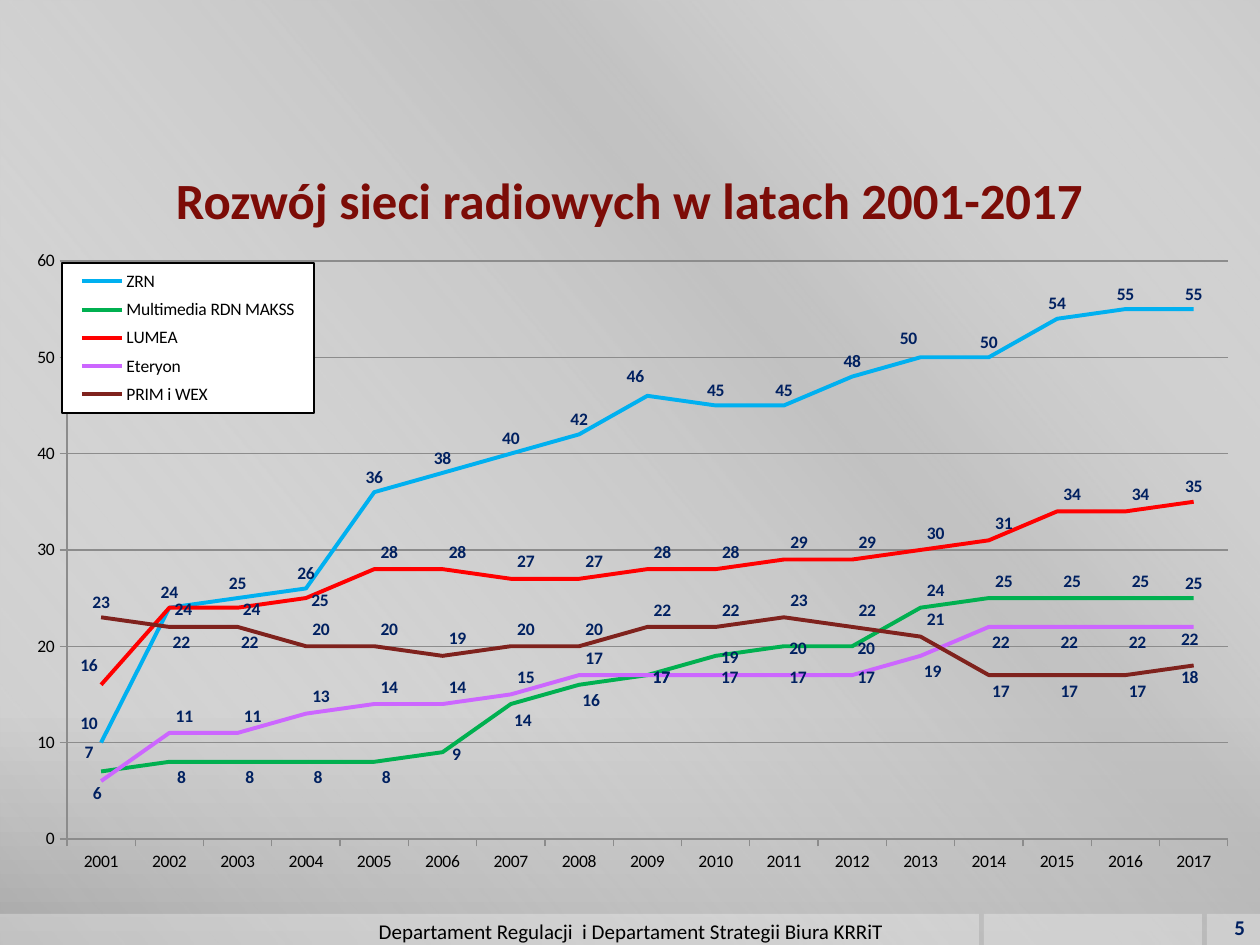
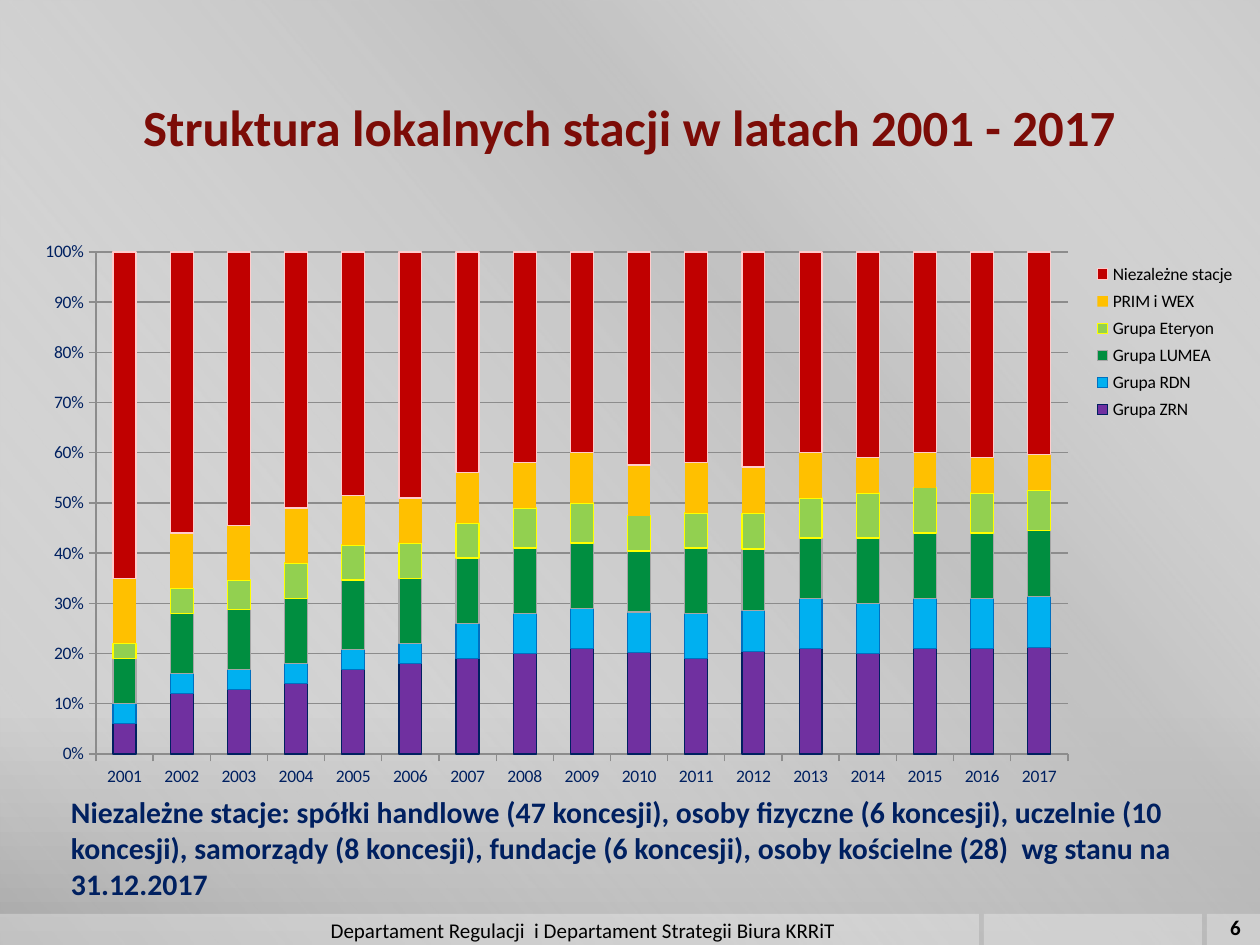
from dataclasses import dataclass

from lxml import etree
from pptx import Presentation
from pptx.chart.data import CategoryChartData
from pptx.dml.color import RGBColor
from pptx.enum.chart import XL_CHART_TYPE, XL_LABEL_POSITION, XL_LEGEND_POSITION, XL_TICK_MARK
from pptx.enum.shapes import MSO_SHAPE
from pptx.enum.text import MSO_ANCHOR, PP_ALIGN
from pptx.oxml import parse_xml
from pptx.oxml.ns import nsdecls, qn
from pptx.util import Emu, Pt

LINE = XL_CHART_TYPE.LINE
STACKED = XL_CHART_TYPE.COLUMN_STACKED_100
LABEL_ABOVE = XL_LABEL_POSITION.ABOVE
RIGHT_SIDE = XL_LEGEND_POSITION.RIGHT
OUTSIDE = XL_TICK_MARK.OUTSIDE
RECTANGLE = MSO_SHAPE.RECTANGLE
TOP, MIDDLE = MSO_ANCHOR.TOP, MSO_ANCHOR.MIDDLE
LEFT, CENTER, RIGHT = PP_ALIGN.LEFT, PP_ALIGN.CENTER, PP_ALIGN.RIGHT


@dataclass(frozen=True)
class Theme:
    font: str = "Calibri"
    title: str = "7C0C07"
    navy: str = "002060"
    black: str = "000000"
    white: str = "FFFFFF"
    grid: str = "8C8C8C"
    title_size: int = 29
    note_size: int = 17
    footer_size: int = 12
    chart_size: int = 10
    backdrop: tuple = ((0, "CBCBCB", 100), (76, "C8C8C8", 100), (100, "A7A7A7", 100))
    sheen: tuple = ((0, "FFFFFF", 0), (34, "BFBFBF", 61), (38, "BFBFBF", 76), (100, "FFFFFF", 0))
    band_opacity: int = 30
    curve_width: float = 2.25
    thin_width: float = 0.75


THEME = Theme()
PAGE = (1260, 945)
PX = 914400 / 126
BAND_TOP = 914
BAND_SPANS = [(1207, 1260), (984, 1202), (0, 979)]
FOOTER = "Departament Regulacji  i Departament Strategii Biura KRRiT"
YEARS = [str(year) for year in range(2001, 2018)]

ABOVE, UPPER_LEFT, UPPER_RIGHT, LOWER_RIGHT, BESIDE, BELOW = range(6)
LABEL_SHIFTS = {
    UPPER_LEFT: (-12, -4),
    UPPER_RIGHT: (15, -2),
    LOWER_RIGHT: (12, 31),
    BESIDE: (14, 17),
    BELOW: (-4, 27),
}

NETWORKS = {
    "title": "Rozwój sieci radiowych w latach 2001-2017",
    "title_box": (63, 136, 1134, 126),
    "footer_box": (174, 915, 914, 32),
    "number": ("5", (1205, 911, 53, 32), THEME.navy, RIGHT),
    "frame": (21, 242, 1218, 630),
    "plot": (67, 261, 1161, 578),
    "legend": (62, 263, 252, 150),
    "series": [
        ("ZRN", "00B0F0", [10, 24, 25, 26, 36, 38, 40, 42, 46, 45, 45, 48, 50, 50, 54, 55, 55],
         [UPPER_LEFT] + [ABOVE] * 7 + [UPPER_LEFT] + [ABOVE] * 3 + [UPPER_LEFT] + [ABOVE] * 4),
        ("Multimedia RDN MAKSS", "00B050", [7, 8, 8, 8, 8, 9, 14, 16, 17, 19, 20, 20, 24, 25, 25, 25, 25],
         [UPPER_LEFT] + [LOWER_RIGHT] * 4 + [BESIDE] + [LOWER_RIGHT] * 2 + [BESIDE] * 4
         + [UPPER_RIGHT] * 4 + [ABOVE]),
        ("LUMEA", "FF0000", [16, 24, 24, 25, 28, 28, 27, 27, 28, 28, 29, 29, 30, 31, 34, 34, 35],
         [UPPER_LEFT] + [BESIDE] * 3 + [UPPER_RIGHT] * 12 + [ABOVE]),
        ("Eteryon", "CC66FF", [6, 11, 11, 13, 14, 14, 15, 17, 17, 17, 17, 17, 19, 22, 22, 22, 22],
         [BELOW] + [UPPER_RIGHT] * 7 + [BESIDE] * 4 + [LOWER_RIGHT] * 4 + [BELOW]),
        ("PRIM i WEX", "7F221D", [23, 22, 22, 20, 20, 19, 20, 20, 22, 22, 23, 22, 21, 17, 17, 17, 18],
         [ABOVE] + [LOWER_RIGHT] * 2 + [UPPER_RIGHT] * 10 + [LOWER_RIGHT] * 3 + [BELOW]),
    ],
}

STATIONS = {
    "title": "Struktura lokalnych stacji w latach 2001 - 2017",
    "title_box": (63, 63, 1134, 126),
    "footer_box": (126, 914, 914, 32),
    "number": ("6", (1217, 908, 37, 38), THEME.black, CENTER),
    "frame": (21, 231, 1228, 567),
    "plot": (96, 252, 972, 502),
    "legend": (1085, 257, 160, 170),
    "note": "Niezależne stacje: spółki handlowe (47 koncesji), osoby fizyczne (6 koncesji), "
            "uczelnie (10 koncesji), samorządy (8 koncesji), fundacje (6 koncesji), "
            "osoby kościelne (28)  wg stanu na 31.12.2017",
    "note_box": (58, 788, 1155, 94),
    "series": [
        ("Grupa ZRN", "7030A0", [6, 12, 13, 14, 17, 18, 19, 20, 21, 20, 19, 20, 21, 20, 21, 21, 21], "002060"),
        ("Grupa RDN", "00B0F0", [4] * 6 + [7, 8, 8, 8, 9, 8] + [10] * 5, "0070C0"),
        ("Grupa LUMEA", "008E40", [9, 12, 12, 13, 14, 13, 13, 13, 13, 12, 13, 12, 12, 13, 13, 13, 13], "A6A6A6"),
        ("Grupa Eteryon", "92D050", [3, 5, 6, 7, 7, 7, 7, 8, 8, 7, 7, 7, 8, 9, 9, 8, 8], "FFFF00"),
        ("PRIM i WEX", "FFC000", [13, 11, 11, 11, 10, 9, 10, 9, 10, 10, 10, 9, 9, 7, 7, 7, 7], None),
        ("Niezależne stacje", "C00000",
         [65, 56, 55, 51, 49, 49, 44, 42, 40, 42, 42, 42, 40, 41, 40, 41, 40], "FFCCCC"),
    ],
}


def scaled(box):
    return [Emu(round(length * PX)) for length in box]


def style_font(font, size, color, bold=False):
    font.name, font.size, font.bold = THEME.font, Pt(size), bold
    font.color.rgb = RGBColor.from_string(color)


def style_line(line, color, width):
    line.color.rgb = RGBColor.from_string(color)
    line.width = Pt(width)


def add_text(slide, box, text, size, color, bold=False, align=LEFT, anchor=TOP, side_margin=13, wrap=True):
    frame = slide.shapes.add_textbox(*scaled(box)).text_frame
    frame.word_wrap = wrap
    frame.vertical_anchor = anchor
    frame.margin_left, frame.margin_right = scaled((side_margin, side_margin))
    paragraph = frame.paragraphs[0]
    paragraph.alignment = align
    run = paragraph.add_run()
    run.text = text
    style_font(run.font, size, color, bold)


def add_opacity(color_element, opacity):
    etree.SubElement(color_element, qn("a:alpha"), val=str(opacity * 1000))


def set_gradient(solid_fill, stops, angle):
    gradient = parse_xml(f'<a:gradFill {nsdecls("a")} rotWithShape="1"><a:gsLst/>'
                         f'<a:lin ang="{angle * 60000}" scaled="0"/></a:gradFill>')
    for position, color, opacity in stops:
        stop = etree.SubElement(gradient[0], qn("a:gs"), pos=str(position * 1000))
        add_opacity(etree.SubElement(stop, qn("a:srgbClr"), val=color), opacity)
    solid_fill.getparent().replace(solid_fill, gradient)


def add_panel(slide, box):
    shape = slide.shapes.add_shape(RECTANGLE, *scaled(box))
    shape.shadow.inherit = False
    shape.line.fill.background()
    shape.fill.solid()
    shape.fill.fore_color.rgb = RGBColor.from_string(THEME.white)
    return shape._element.spPr.find(qn("a:solidFill"))


def add_base_slide(presentation, content):
    slide = presentation.slides.add_slide(presentation.slide_layouts[6])
    slide.background.fill.solid()
    set_gradient(next(slide._element.iter(qn("a:solidFill"))), THEME.backdrop, 90)
    set_gradient(add_panel(slide, (0, 0, *PAGE)), THEME.sheen, 140)
    for start, end in BAND_SPANS:
        band_fill = add_panel(slide, (start, BAND_TOP, end - start, PAGE[1] - BAND_TOP))
        add_opacity(band_fill[0], THEME.band_opacity)
    add_text(slide, content["title_box"], content["title"], THEME.title_size, THEME.title,
             bold=True, align=CENTER, anchor=MIDDLE, side_margin=0)
    add_text(slide, content["footer_box"], FOOTER, THEME.footer_size, THEME.black,
             align=CENTER, anchor=MIDDLE)
    number, box, color, align = content["number"]
    add_text(slide, box, number, THEME.footer_size, color, bold=True, align=align,
             anchor=MIDDLE, wrap=False)
    return slide


def manual_layout(**values):
    layout = parse_xml(f'<c:layout {nsdecls("c")}><c:manualLayout/></c:layout>')
    for name, value in values.items():
        etree.SubElement(layout[0], qn(f"c:{name}"), val=str(value))
    return layout


def place_part(part, index, box, frame, **options):
    for old_layout in part.findall(qn("c:layout")):
        part.remove(old_layout)
    left, top, width, height = box
    part.insert(index, manual_layout(
        **options, xMode="edge", yMode="edge",
        x=round((left - frame[0]) / frame[2], 4), y=round((top - frame[1]) / frame[3], 4),
        w=round(width / frame[2], 4), h=round(height / frame[3], 4)))


def add_styled_chart(slide, content, chart_type, axis_color, overlay):
    data = CategoryChartData()
    data.categories = YEARS
    for name, _, values, _ in content["series"]:
        data.add_series(name, values)
    frame = content["frame"]
    chart = slide.shapes.add_chart(chart_type, *scaled(frame), data).chart
    chart.has_title = False
    style_font(chart.font, THEME.chart_size, THEME.black)
    chart.plots[0].vary_by_categories = False
    for axis in (chart.category_axis, chart.value_axis):
        axis.major_tick_mark = OUTSIDE
        style_font(axis.tick_labels.font, THEME.chart_size, axis_color)
        style_line(axis.format.line, THEME.grid, THEME.thin_width)
    chart.value_axis.has_major_gridlines = True
    style_line(chart.value_axis.major_gridlines.format.line, THEME.grid, THEME.thin_width)
    chart.has_legend = True
    legend = chart.legend
    legend.position = RIGHT_SIDE
    legend.include_in_layout = overlay
    style_font(legend.font, THEME.chart_size, THEME.black)
    place_part(legend._element, 1, content["legend"], frame)
    plot_area = next(chart._chartSpace.iter(qn("c:plotArea")))
    place_part(plot_area, 0, content["plot"], frame, layoutTarget="inner")
    return chart


def style_label(label):
    style_font(label.font, THEME.chart_size, THEME.navy, bold=True)
    label.position = LABEL_ABOVE


def place_labels(series, places, frame):
    series.data_labels.show_value = True
    style_label(series.data_labels)
    shifted = [(index, LABEL_SHIFTS[place]) for index, place in enumerate(places) if place != ABOVE]
    for index, _ in shifted:
        style_label(series.points[index].data_label)
    for element, (_, (right, down)) in zip(series._element.iter(qn("c:dLbl")), shifted):
        element.insert(1, manual_layout(x=round(right / frame[2], 4), y=round(down / frame[3], 4)))


def build_networks(presentation):
    slide = add_base_slide(presentation, NETWORKS)
    chart = add_styled_chart(slide, NETWORKS, LINE, THEME.black, True)
    chart.value_axis.minimum_scale = 0
    chart.value_axis.maximum_scale = 60
    chart.value_axis.major_unit = 10
    overlay = chart.legend._element.find(qn("c:overlay"))
    overlay.addnext(parse_xml(
        f'<c:spPr {nsdecls("c", "a")}><a:solidFill><a:srgbClr val="{THEME.white}"/></a:solidFill>'
        f'<a:ln w="{Pt(THEME.thin_width)}"><a:solidFill><a:srgbClr val="{THEME.black}"/>'
        f'</a:solidFill></a:ln></c:spPr>'))
    for series, (_, color, _, places) in zip(chart.plots[0].series, NETWORKS["series"]):
        series.smooth = False
        style_line(series.format.line, color, THEME.curve_width)
        place_labels(series, places, NETWORKS["frame"])


def build_stations(presentation):
    slide = add_base_slide(presentation, STATIONS)
    chart = add_styled_chart(slide, STATIONS, STACKED, THEME.navy, False)
    chart.value_axis.tick_labels.number_format = "0%"
    chart.value_axis.tick_labels.number_format_is_linked = False
    chart.plots[0].gap_width = 150
    chart.plots[0].overlap = 100
    for series, (_, color, _, outline) in zip(chart.plots[0].series, STATIONS["series"]):
        series.format.fill.solid()
        series.format.fill.fore_color.rgb = RGBColor.from_string(color)
        if outline:
            style_line(series.format.line, outline, THEME.thin_width)
    add_text(slide, STATIONS["note_box"], STATIONS["note"], THEME.note_size, THEME.navy, bold=True)


def main():
    presentation = Presentation()
    presentation.slide_width, presentation.slide_height = scaled(PAGE)
    build_networks(presentation)
    build_stations(presentation)
    presentation.save("out.pptx")


if __name__ == "__main__":
    main()
